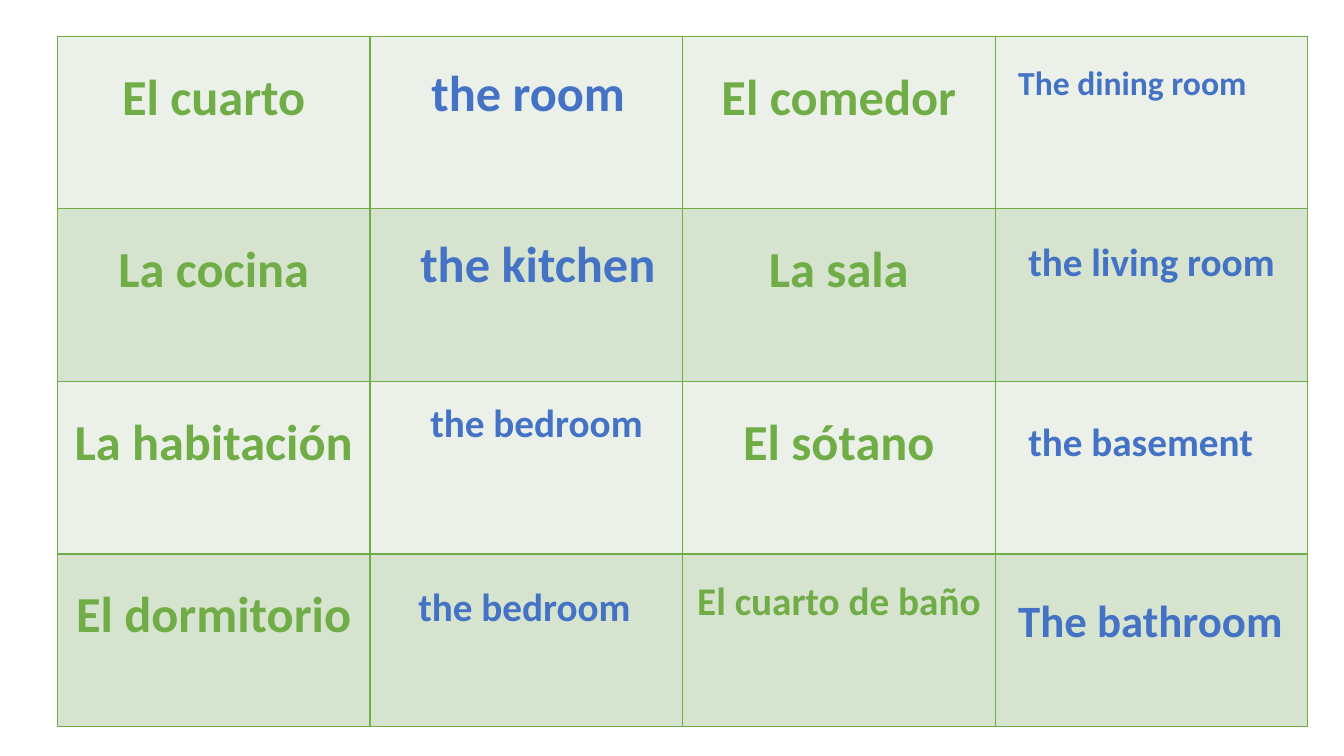
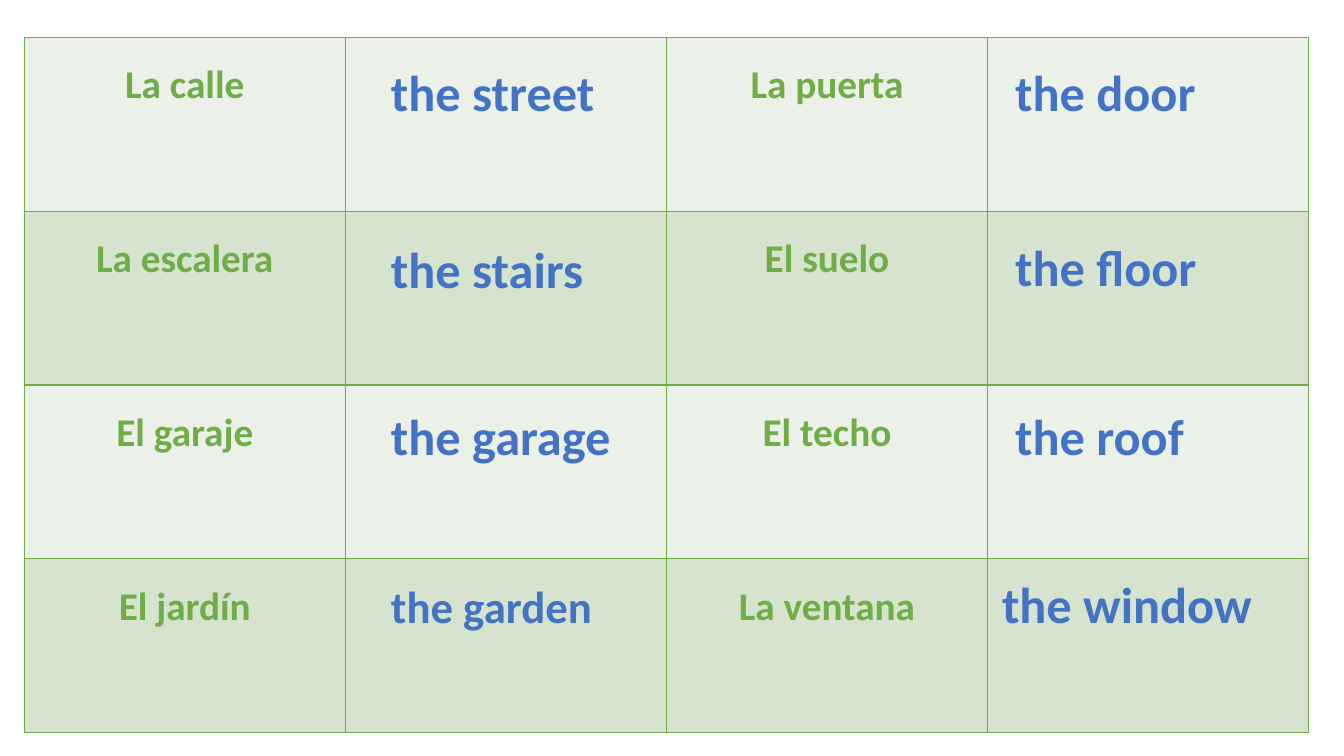
from dataclasses import dataclass

from lxml import etree
from pptx import Presentation
from pptx.dml.color import RGBColor
from pptx.enum import text
from pptx.oxml import ns
from pptx.util import Inches, Pt

COLORS = {
    "spanish": "70AD47",
    "english": "4472C4",
    "border": "70AD47",
    "odd_row": "EBF1E9",
    "even_row": "D5E3CF",
}
FONT = "Calibri"
SPANISH_COLUMNS = (0, 2)
COLUMN_COUNT = 4


@dataclass
class Translation:
    words: str
    left: float
    top: float
    width: float
    size: int = 36


ROOMS = [
    [("El cuarto", 36), ("El comedor", 36)],
    [("La cocina", 36), ("La sala", 36)],
    [("La habitación", 36), ("El sótano", 36)],
    [("El dormitorio", 36), ("El cuarto de baño", 28)],
]
ROOM_TRANSLATIONS = [
    Translation("the room", 4.18, 0.56, 2.4),
    Translation("the kitchen", 4.07, 2.25, 2.75),
    Translation("the bedroom", 4.17, 3.9, 2.65, 28),
    Translation("the bedroom", 4.05, 5.73, 2.65, 28),
    Translation("The dining room", 10, 0.56, 2.75, 24),
    Translation("the living room", 10.1, 2.3, 2.65, 28),
    Translation("the basement", 10.1, 4.09, 2.65, 28),
    Translation("The bathroom", 10, 5.83, 2.89, 32),
]
HOUSE_PARTS = [
    [("La calle", 28), ("La puerta", 28)],
    [("La escalera", 28), ("El suelo", 28)],
    [("El garaje", 28), ("El techo", 28)],
    [("El jardín", 28), ("La ventana", 28)],
]
HOUSE_PART_TRANSLATIONS = [
    Translation("the street", 3.78, 0.56, 2.4),
    Translation("the stairs", 3.78, 2.31, 2.4),
    Translation("the garage", 3.78, 3.97, 2.4),
    Translation("the garden", 3.78, 5.69, 2.4, 32),
    Translation("the door", 9.97, 0.56, 2.4),
    Translation("the floor", 9.97, 2.29, 2.4),
    Translation("the roof", 9.97, 3.97, 2.4),
    Translation("the window", 9.84, 5.64, 2.97),
]


def rgb(name):
    return RGBColor.from_string(COLORS[name])


def write_words(paragraph, words, size, color):
    paragraph.text = words
    for run in paragraph.runs:
        run.font.name = FONT
        run.font.size = Pt(size)
        run.font.bold = True
        run.font.color.rgb = rgb(color)


def add_borders(cell):
    properties = cell._tc.get_or_add_tcPr()
    for index, side in enumerate(("lnL", "lnR", "lnT", "lnB")):
        line = etree.Element(ns.qn(f"a:{side}"), w=str(Pt(1)))
        fill = etree.SubElement(line, ns.qn("a:solidFill"))
        etree.SubElement(fill, ns.qn("a:srgbClr"), val=COLORS["border"])
        properties.insert(index, line)


def format_cell(cell, row_index):
    cell.margin_left = cell.margin_right = Inches(0.07)
    cell.margin_top = cell.margin_bottom = 0
    cell.fill.solid()
    cell.fill.fore_color.rgb = rgb("even_row" if row_index % 2 else "odd_row")
    add_borders(cell)


def add_vocabulary_table(slide, rows, left, top, width, height):
    frame = slide.shapes.add_table(
        len(rows), COLUMN_COUNT,
        Inches(left), Inches(top), Inches(width), Inches(height))
    table = frame.table
    table.first_row = table.horz_banding = False
    for row_index, entries in enumerate(rows):
        for column_index in range(COLUMN_COUNT):
            format_cell(table.cell(row_index, column_index), row_index)
        for column_index, (words, size) in zip(SPANISH_COLUMNS, entries):
            cell = table.cell(row_index, column_index)
            paragraph = cell.text_frame.paragraphs[0]
            paragraph.alignment = text.PP_ALIGN.CENTER
            paragraph.line_spacing = 1.5
            write_words(paragraph, words, size, "spanish")


def add_translation(slide, item):
    height = item.size * 1.22 / 72 + 0.1
    box = slide.shapes.add_textbox(
        Inches(item.left), Inches(item.top), Inches(item.width), Inches(height))
    box.text_frame.word_wrap = True
    box.text_frame.auto_size = text.MSO_AUTO_SIZE.SHAPE_TO_FIT_TEXT
    write_words(box.text_frame.paragraphs[0], item.words, item.size, "english")


def add_vocabulary_slide(presentation, rows, translations, table_area):
    slide = presentation.slides.add_slide(presentation.slide_layouts[6])
    add_vocabulary_table(slide, rows, *table_area)
    for item in translations:
        add_translation(slide, item)


def main():
    presentation = Presentation()
    presentation.slide_width = Inches(13.33)
    presentation.slide_height = Inches(7.5)
    add_vocabulary_slide(
        presentation, ROOMS, ROOM_TRANSLATIONS, (0.57, 0.36, 12.4, 6.85))
    add_vocabulary_slide(
        presentation, HOUSE_PARTS, HOUSE_PART_TRANSLATIONS,
        (0.24, 0.37, 12.74, 6.9))
    presentation.save("out.pptx")


if __name__ == "__main__":
    main()
